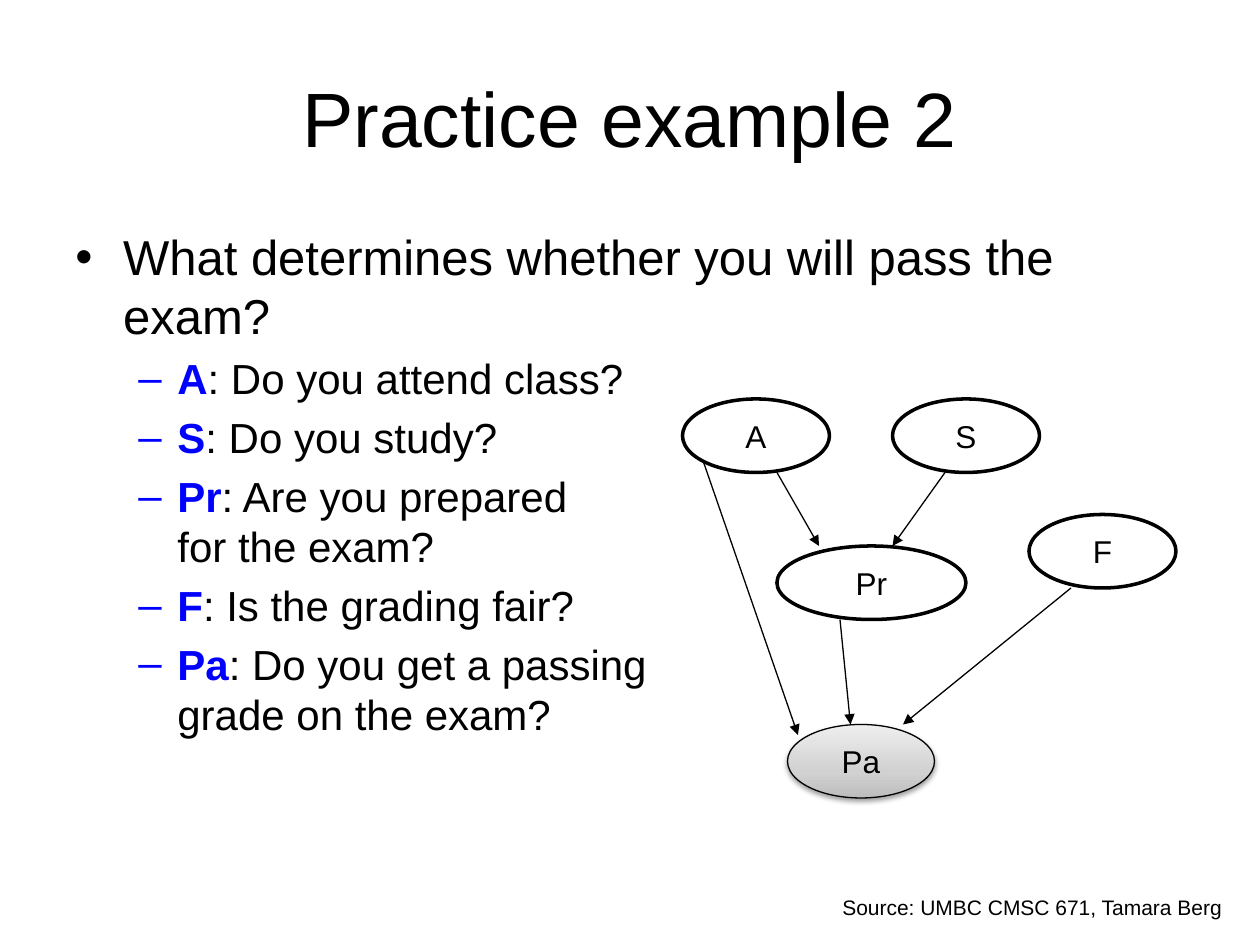
from dataclasses import dataclass
from lxml.etree import SubElement
from pptx import Presentation
from pptx.dml.color import RGBColor as RGB
from pptx.enum.shapes import MSO_CONNECTOR as Link, MSO_SHAPE as Form
from pptx.enum.text import MSO_ANCHOR as Anchor, PP_ALIGN as Align
from pptx.oxml.ns import qn
from pptx.util import Inches, Pt


@dataclass(frozen=True)
class Theme:
    font: str = "Arial"
    ink: str = "000000"
    paper: str = "FFFFFF"
    key: str = "0000FF"
    title: int = 44
    body: int = 28
    item: int = 24
    node: int = 18
    note: int = 12
    bold: float = 2
    thin: float = 0.75
    shade: tuple = ((0, "BDBDBD"), (35, "D1D1D1"), (100, "EEEEEE"))


THEME = Theme()
CELL = Inches(1 / 12)
ITEMS = (
    ("A", ": Do you attend class?"),
    ("S", ": Do you study?"),
    ("Pr", ": Are you prepared", "for the exam?"),
    ("F", ": Is the grading fair?"),
    ("Pa", ": Do you get a passing", "grade on the exam?"),
)
NODES = {
    "A": (0, 0, 14),
    "S": (20, 0, 14),
    "Pr": (9, 14, 18),
    "F": (33, 11, 14),
    "Pa": (10, 31, 14),
}
EDGES = (
    ((9, 7), (13, 14)),
    ((25, 7), (20, 14)),
    ((37, 18), (21, 31)),
    ((15, 21), (16, 31)),
    ((2, 6), (11, 32)),
)


def add(node, tag, **attrs):
    return SubElement(node, qn(tag), {k: str(v) for k, v in attrs.items()})


def style(font, size, color=THEME.ink, bold=False):
    font.name, font.size, font.bold = THEME.font, Pt(size), bold
    font.color.rgb = RGB.from_string(color)


def label(slide, box, text, size, align, anchor=Anchor.TOP):
    frame = slide.shapes.add_textbox(*box).text_frame
    frame.word_wrap = True
    frame.vertical_anchor = anchor
    frame.text = text
    para = frame.paragraphs[0]
    para.alignment = align
    style(para.runs[0].font, size)


def bullet(para, mark, color, left, hang):
    props = para._p.get_or_add_pPr()
    props.set("marL", str(Inches(left)))
    props.set("indent", str(-Inches(hang)))
    add(add(props, "a:buClr"), "a:srgbClr", val=color)
    add(props, "a:buFont", typeface=THEME.font)
    add(props, "a:buChar", char=mark)


def outline(slide, box):
    frame = slide.shapes.add_textbox(*box).text_frame
    frame.word_wrap = True
    frame.text = "What determines whether you will pass the exam?"
    head = frame.paragraphs[0]
    bullet(head, "•", THEME.ink, 0.38, 0.38)
    style(head.runs[0].font, THEME.body)
    for name, *lines in ITEMS:
        para = frame.add_paragraph()
        para.level = 1
        bullet(para, "–", THEME.key, 0.81, 0.31)
        para.space_before = Pt(THEME.item * 0.2)
        para.text = "\v".join([name + lines[0], *lines[1:]])
        first = para.runs[0]
        first.text = name
        style(first.font, THEME.item, THEME.key, True)
        rest = para.add_run()
        rest.text = lines[0]
        first._r.addnext(rest._r)
        for run in para.runs[1:]:
            style(run.font, THEME.item)


def shade(shape):
    shape.fill.gradient()
    shape.fill.gradient_angle = 90
    stops = shape._element.spPr.find(qn("a:gradFill")).find(qn("a:gsLst"))
    for stop in list(stops):
        stops.remove(stop)
    for share, color in THEME.shade:
        stop = add(stops, "a:gs", pos=share * 1000)
        add(stop, "a:srgbClr", val=color)
    glow = add(shape._element.spPr.find(qn("a:effectLst")), "a:outerShdw",
               blurRad=Pt(3.1), dist=Pt(1.6), dir=5400000, rotWithShape=0)
    add(add(glow, "a:srgbClr", val=THEME.ink), "a:alpha", val=38000)


def oval(slide, box, name, seen):
    shape = slide.shapes.add_shape(Form.OVAL, *box)
    shape.shadow.inherit = False
    shape.line.color.rgb = RGB.from_string(THEME.ink)
    shape.line.width = Pt(THEME.thin if seen else THEME.bold)
    if seen:
        shade(shape)
    else:
        shape.fill.solid()
        shape.fill.fore_color.rgb = RGB.from_string(THEME.paper)
    frame = shape.text_frame
    frame.word_wrap = False
    frame.vertical_anchor = Anchor.MIDDLE
    frame.text = name
    para = frame.paragraphs[0]
    para.alignment = Align.CENTER
    style(para.runs[0].font, THEME.node)


def arrow(slide, start, end):
    line = slide.shapes.add_connector(Link.STRAIGHT, *start, *end)
    line.line.color.rgb = RGB.from_string(THEME.ink)
    line.line.width = Pt(THEME.thin)
    add(line.line._get_or_add_ln(), "a:tailEnd", type="triangle")
    add(line._element.spPr, "a:effectLst")


def network(slide, box):
    left, top = box[:2]

    def spot(col, row):
        return left + col * CELL, top + row * CELL

    for name, (col, row, wide) in NODES.items():
        oval(slide, (*spot(col, row), wide * CELL, 7 * CELL), name, name == "Pa")
    for start, end in EDGES:
        arrow(slide, spot(*start), spot(*end))


def main():
    deck = Presentation()
    deck.slide_width, deck.slide_height = Inches(10), Inches(7.5)
    slide = deck.slides.add_slide(deck.slide_layouts[6])

    def area(x, y, w, h):
        wide, high = deck.slide_width, deck.slide_height
        return int(x * wide), int(y * high), int(w * wide), int(h * high)

    outline(slide, area(0.05, 7 / 30, 0.9, 0.66))
    network(slide, (65 * CELL, 38 * CELL, 47 * CELL, 38 * CELL))
    label(slide, area(0.05, 0.04, 0.9, 1 / 6), "Practice example 2",
          THEME.title, Align.CENTER, Anchor.MIDDLE)
    label(slide, area(0.61, 0.94, 0.37, 0.04),
          "Source: UMBC CMSC 671, Tamara Berg", THEME.note, Align.RIGHT)
    deck.save("out.pptx")


if __name__ == "__main__":
    main()
